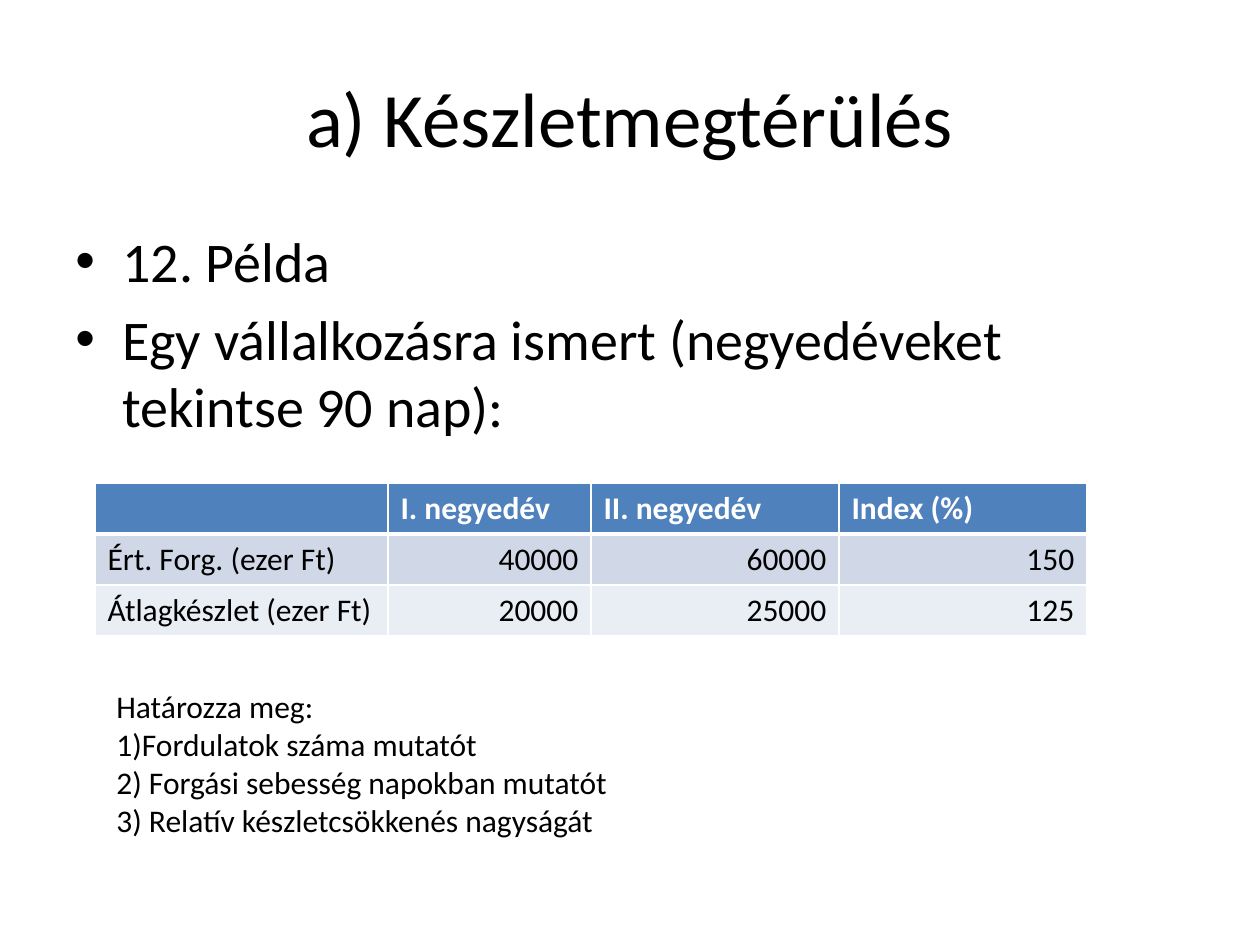
from dataclasses import dataclass

from lxml.etree import SubElement
from pptx import Presentation
from pptx.dml.color import RGBColor
from pptx.enum.text import MSO_ANCHOR, MSO_AUTO_SIZE, PP_ALIGN
from pptx.oxml.ns import qn
from pptx.util import Pt

PX = 914400 / 126
FONT = "Calibri"
COLORS = {
    "text": "000000",
    "white": "FFFFFF",
    "header": "4F81BD",
    "band_dark": "D0D8E8",
    "band_light": "E9EDF4",
}
INDENT = 47  # hanging indent, px


def px(n: int) -> int:
    return round(n * PX)


@dataclass
class Box:
    left: int
    top: int
    width: int
    height: int

    def emu(self) -> tuple:
        return px(self.left), px(self.top), px(self.width), px(self.height)


@dataclass
class Row:
    texts: tuple
    fill: str
    color: str = "text"
    bold: bool = False
    top: int = 1
    bottom: int = 1


def style(p, size: int, color: str = "text", bold: bool = False) -> None:
    for r in p.runs:
        r.font.name, r.font.size, r.font.bold = FONT, Pt(size), bold
        r.font.color.rgb = RGBColor.from_string(COLORS[color])


def hang(p, bullet: str = "") -> None:
    pPr = p._p.get_or_add_pPr()
    pPr.set("marL", str(px(INDENT)))
    pPr.set("indent", str(-px(INDENT)))
    if bullet:
        SubElement(pPr, qn("a:buFont")).set("typeface", "Arial")
        SubElement(pPr, qn("a:buChar")).set("char", bullet)


def add_text(s, box: Box, lines: tuple, size: int):
    tf = s.shapes.add_textbox(*box.emu()).text_frame
    tf.word_wrap = True
    tf.text = "\n".join(lines)
    for p in tf.paragraphs:
        style(p, size)
    return tf


def set_borders(cell, row: Row) -> None:
    tcPr = cell._tc.get_or_add_tcPr()
    for side, width in (("L", 1), ("R", 1), ("T", row.top), ("B", row.bottom)):
        ln = SubElement(tcPr, qn(f"a:ln{side}"), w=str(Pt(width)))
        fill = SubElement(ln, qn("a:solidFill"))
        SubElement(fill, qn("a:srgbClr")).set("val", COLORS["white"])


def add_grid(s, box: Box, widths: tuple, rows: tuple) -> None:
    table = s.shapes.add_table(len(rows), len(widths), *box.emu()).table
    for column, width in zip(table.columns, widths):
        column.width = px(width)
    for i, row in enumerate(rows):
        for j, text in enumerate(row.texts):
            cell = table.cell(i, j)
            set_borders(cell, row)
            cell.fill.solid()
            cell.fill.fore_color.rgb = RGBColor.from_string(COLORS[row.fill])
            cell.text_frame.text = text
            p = cell.text_frame.paragraphs[0]
            if text.isdigit():
                p.alignment = PP_ALIGN.RIGHT
            style(p, 18, row.color, row.bold)


def main() -> None:
    prs = Presentation()
    prs.slide_width, prs.slide_height = px(1260), px(945)
    s = prs.slides.add_slide(prs.slide_layouts[5])

    # Title
    title = s.shapes.title
    title.left, title.top, title.width, title.height = Box(63, 38, 1134, 157).emu()
    tf = title.text_frame
    tf.text = "a) Készletmegtérülés"
    tf.vertical_anchor = MSO_ANCHOR.MIDDLE
    tf.paragraphs[0].alignment = PP_ALIGN.CENTER
    style(tf.paragraphs[0], 44)

    # Bulleted introduction
    tf = add_text(s, Box(63, 220, 1134, 624), (
        "12. Példa",
        "Egy vállalkozásra ismert (negyedéveket tekintse 90 nap):",
    ), 32)
    for p in tf.paragraphs:
        hang(p, "•")
    tf.paragraphs[1].space_before = Pt(6.4)

    # Quarterly figures
    widths = (293, 203, 248, 248)
    add_grid(s, Box(95, 483, sum(widths), 153), widths, (
        Row(("", "I. negyedév", "II. negyedév", "Index (%)"),
            "header", "white", bold=True, bottom=3),
        Row(("Ért. Forg. (ezer Ft)", "40000", "60000", "150"), "band_dark", top=3),
        Row(("Átlagkészlet (ezer Ft)", "20000", "25000", "125"), "band_light"),
    ))

    # Tasks
    tf = add_text(s, Box(104, 681, 983, 165), (
        "Határozza meg:",
        "1)Fordulatok száma mutatót",
        "2) Forgási sebesség napokban mutatót",
        "3) Relatív készletcsökkenés nagyságát",
    ), 18)
    tf.auto_size = MSO_AUTO_SIZE.SHAPE_TO_FIT_TEXT
    for p in tf.paragraphs[1:]:
        hang(p)

    prs.save("out.pptx")


if __name__ == "__main__":
    main()
